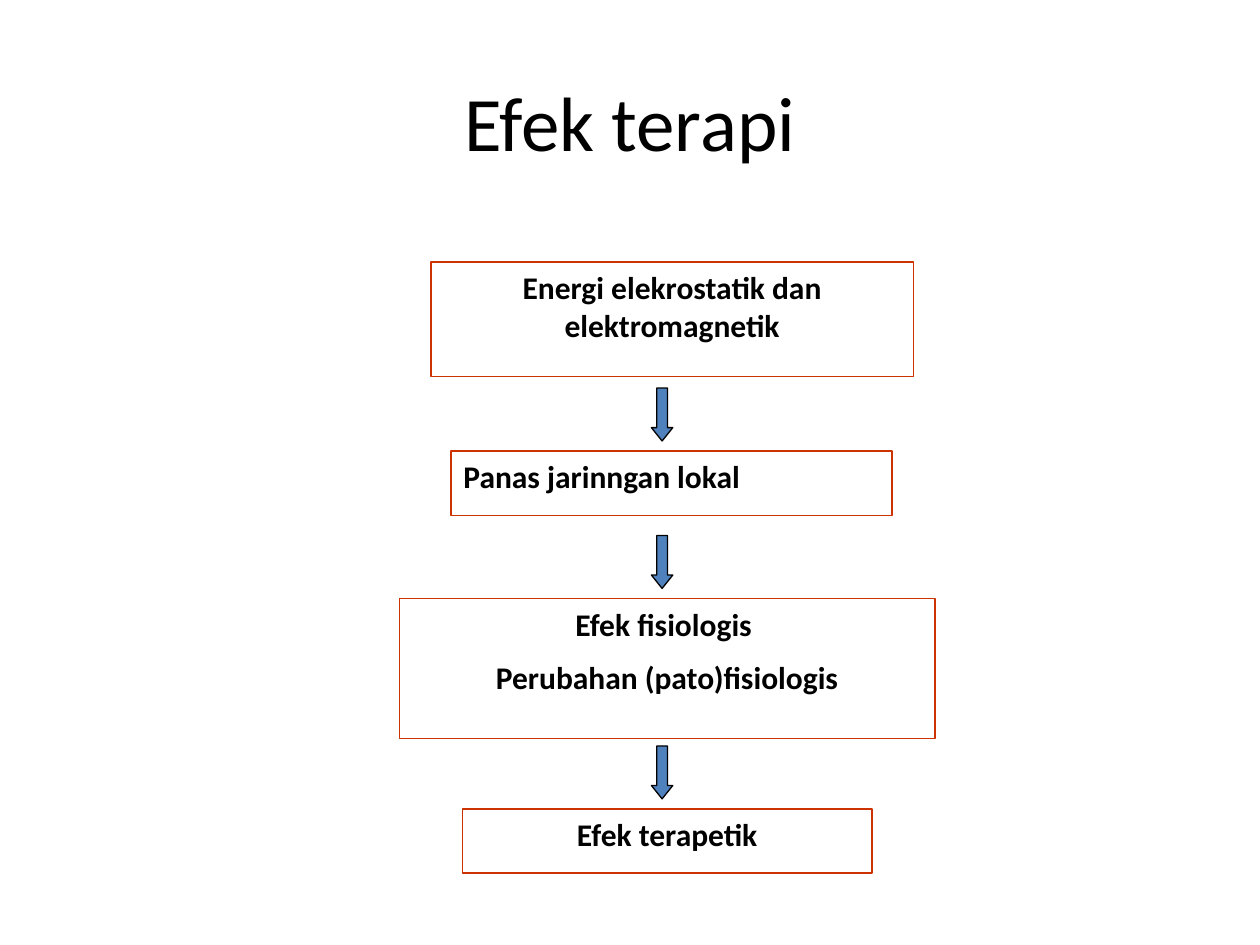
from pptx import Presentation
from pptx.dml.color import RGBColor
from pptx.enum.shapes import MSO_SHAPE
from pptx.enum.text import MSO_ANCHOR, PP_ALIGN
from pptx.util import Inches, Pt


def color(target, code):
    """Give a fill, or a font's fill, one solid colour."""
    target.fill.solid()
    target.fill.fore_color.rgb = RGBColor.from_string(code)


def write(frame, lines, align, anchor, style):
    frame.word_wrap = True
    frame.vertical_anchor = anchor
    for i, line in enumerate(lines):
        para = frame.paragraphs[0] if i == 0 else frame.add_paragraph()
        para.alignment = align
        para.space_before = Pt(9 if i else 0)
        run = para.add_run()
        run.text = line
        for name, value in style.items():
            setattr(run.font, name, value)
        color(run.font, "000000")


deck = Presentation()
deck.slide_width, deck.slide_height = Inches(10), Inches(7.5)
slide = deck.slides.add_slide(deck.slide_layouts[5])
shapes = slide.shapes

# Title
title = shapes.title
title.left, title.top = Inches(0.75), Inches(0.42)
title.width, title.height = Inches(8.5), Inches(1.08)
write(title.text_frame, ["Efek terapi"], PP_ALIGN.CENTER, MSO_ANCHOR.MIDDLE,
      {"name": "Calibri", "size": Pt(44)})

# Steps of the flow
bold = {"name": "Calibri", "size": Pt(18), "bold": True}
mid, left = PP_ALIGN.CENTER, PP_ALIGN.LEFT
steps = [
    (3.42, 2.08, 3.83, 0.91, mid, ["Energi elekrostatik dan elektromagnetik"]),
    (3.58, 3.58, 3.5, 0.51, left, ["Panas jarinngan lokal"]),
    (3.17, 4.75, 4.25, 1.11, mid,
     ["Efek fisiologis ", "Perubahan (pato)fisiologis"]),
    (3.67, 6.42, 3.25, 0.51, mid, ["Efek terapetik"]),
]
for *place, align, lines in steps:
    box = shapes.add_shape(MSO_SHAPE.RECTANGLE, *map(Inches, place))
    box.shadow.inherit = False
    box.fill.background()
    color(box.line, "CC3300")
    box.line.width = Pt(0.75)
    write(box.text_frame, lines, align, MSO_ANCHOR.TOP, bold)

# An arrow above each step after the first
for step in steps[1:]:
    arrow = shapes.add_shape(MSO_SHAPE.DOWN_ARROW, Inches(5.17),
                             Inches(step[1] - 0.5), Inches(0.17), Inches(0.42))
    arrow.shadow.inherit = False
    arrow.adjustments[0], arrow.adjustments[1] = 0.5, 0.625
    color(arrow, "4F81BD")
    color(arrow.line, "000000")
    arrow.line.width = Pt(0.75)

deck.save("out.pptx")
